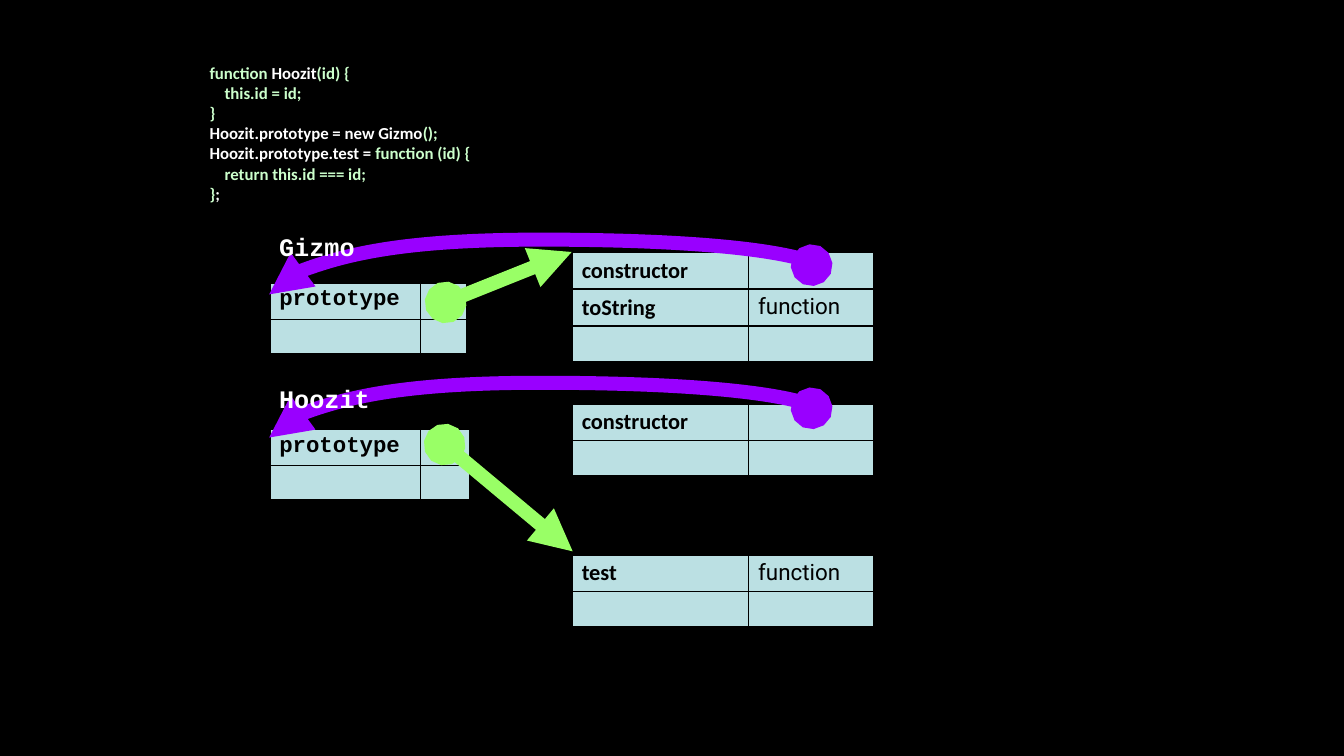
from lxml import etree
from pptx import Presentation
from pptx.dml.color import RGBColor
from pptx.enum.shapes import MSO_CONNECTOR
from pptx.oxml.ns import qn
from pptx.util import Inches, Pt

BLACK = RGBColor(0x00, 0x00, 0x00)
WHITE = RGBColor(0xFF, 0xFF, 0xFF)
MINT = RGBColor(0xCC, 0xFF, 0xCC)
CELL = RGBColor(0xBB, 0xE0, 0xE3)
GREEN = RGBColor(0x99, 0xFF, 0x66)
PURPLE = RGBColor(0x99, 0x00, 0xFF)

CODE_FONT = dict(name="Calibri", size=Pt(12), bold=True)
LABEL_FONT = dict(name="Courier New", size=Pt(18), bold=True)
PROPERTY_FONT = dict(name="Calibri", size=Pt(16), bold=True)
MEMBER_FONT = dict(name="Courier New", size=Pt(16), bold=True)
VALUE_FONT = dict(name="Roboto", size=Pt(16), bold=False)

CODE = [
    (0, [("function ", MINT), ("Hoozit", WHITE), ("(id) {", MINT)]),
    (1, [("this.id = id;", MINT)]),
    (0, [("}", MINT)]),
    (0, [("Hoozit.prototype = new Gizmo", WHITE), ("();", MINT)]),
    (0, [("Hoozit.prototype.test = ", WHITE), ("function (id) {", MINT)]),
    (1, [("return this.id === id;", MINT)]),
    (0, [("}", MINT), (";", WHITE)]),
]


def add_run(p, text, font, color):
    """Add a run with the given font values and colour."""
    r = p.add_run()
    r.text = text
    for key, value in font.items():
        setattr(r.font, key, value)
    r.font.color.rgb = color


def add_code(slide, left, top, width, height):
    """Place the code listing in its box."""
    tf = slide.shapes.add_textbox(
        Inches(left), Inches(top), Inches(width), Inches(height)).text_frame
    tf.word_wrap = True
    for i, (level, parts) in enumerate(CODE):
        p = tf.paragraphs[0] if i == 0 else tf.add_paragraph()
        p._p.get_or_add_pPr().set("marL", str(Inches(0.15 * level)))
        for text, color in parts:
            add_run(p, text, CODE_FONT, color)


def add_label(slide, text, left, top, width):
    """Place the name above an object table."""
    tf = slide.shapes.add_textbox(
        Inches(left), Inches(top), Inches(width), Inches(0.4)).text_frame
    tf.word_wrap = False
    add_run(tf.paragraphs[0], text, LABEL_FONT, WHITE)


def set_borders(cell, widths):
    """Draw black cell borders with a width in points for each side."""
    tcPr = cell._tc.get_or_add_tcPr()
    for i, (side, width) in enumerate(widths.items()):
        ln = etree.Element(qn(f"a:ln{side}"), w=str(Pt(width)))
        fill = etree.SubElement(ln, qn("a:solidFill"))
        etree.SubElement(fill, qn("a:srgbClr"), val=str(BLACK))
        tcPr.insert(i, ln)


def add_object(slide, left, top, col_widths, row_height, rows, key_font):
    """Place an object table of keys and values at the given corner."""
    n_rows, n_cols = len(rows), len(col_widths)
    table = slide.shapes.add_table(
        n_rows, n_cols, Inches(left), Inches(top),
        Inches(sum(col_widths)), Inches(row_height * n_rows)).table
    table.first_row = table.horz_banding = False
    for col, width in zip(table.columns, col_widths):
        col.width = Inches(width)
    for i, row in enumerate(rows):
        table.rows[i].height = Inches(row_height)
        for j, (text, font) in enumerate(zip(row, (key_font, VALUE_FONT))):
            cell = table.cell(i, j)
            cell.fill.solid()
            cell.fill.fore_color.rgb = CELL
            outer = dict(L=j == 0, R=j == n_cols - 1, T=i == 0, B=i == n_rows - 1)
            set_borders(cell, {side: 2.25 if edge else 1 for side, edge in outer.items()})
            p = cell.text_frame.paragraphs[0]
            if text:
                add_run(p, text, font, BLACK)
            else:
                p._p.get_or_add_endParaRPr().set("sz", "1200")


def add_arrow(slide, kind, start, end, color):
    """Draw a thick arrow with a round tail and a triangular head."""
    sp = slide.shapes.add_connector(kind, *map(Inches, start + end))
    sp.line.width = Pt(10)
    sp.line.color.rgb = color
    ln = sp.line._get_or_add_ln()
    etree.SubElement(ln, qn("a:headEnd"), type="oval")
    etree.SubElement(ln, qn("a:tailEnd"), type="triangle")
    etree.SubElement(sp._element.spPr, qn("a:effectLst"))
    return sp


def add_back_arrow(slide, left, top, width, height):
    """Arch an arrow from the box's upper right to its lower left."""
    cx, cy = left + width / 2, top + height / 2
    start = (cx + height / 2, cy + width / 2)
    end = (cx - height / 2, cy - width / 2)
    sp = add_arrow(slide, MSO_CONNECTOR.CURVE, start, end, PURPLE)
    spPr = sp._element.spPr
    spPr.find(qn("a:xfrm")).set("rot", str(270 * 60000))
    geom = spPr.find(qn("a:prstGeom"))
    for av in geom.findall(qn("a:avLst")):
        geom.remove(av)
    av = etree.SubElement(geom, qn("a:avLst"))
    etree.SubElement(av, qn("a:gd"), name="adj1", fmla="val -87300")


def build_slide(prs):
    """Build the prototype chain slide."""
    slide = prs.slides.add_slide(prs.slide_layouts[6])
    slide.background.fill.solid()
    slide.background.fill.fore_color.rgb = BLACK
    add_code(slide, 1.98, 0.57, 8.5, 1.51)

    left, right = 2.67, 5.67
    empty = ("", "")
    prototype = [("prototype", ""), empty]
    for top, value_width in ((2.8, 0.47), (4.25, 0.5)):
        add_object(slide, left, top, (1.5, value_width), 0.35, prototype, MEMBER_FONT)
    for top, rows in (
        (2.5, [("constructor", ""), ("toString", "function"), empty]),
        (4, [("constructor", ""), empty]),
        (5.5, [("test", "function"), empty]),
    ):
        add_object(slide, right, top, (1.75, 1.25), 0.36, rows, PROPERTY_FONT)

    for start, end in (((4.42, 3), (right, 2.5)), ((4.41, 4.41), (5.68, 5.47))):
        add_arrow(slide, MSO_CONNECTOR.STRAIGHT, start, end, GREEN)
    for top in (2.63, 4.05):
        add_back_arrow(slide, left, top, 5.38, 0.29)
    for text, top, width in (("Gizmo", 2.25, 0.96), ("Hoozit", 3.75, 1.1)):
        add_label(slide, text, left, top, width)


def main():
    """Create and save the presentation."""
    prs = Presentation()
    prs.slide_width, prs.slide_height = Inches(13.33), Inches(7.5)
    build_slide(prs)
    prs.save("out.pptx")


if __name__ == "__main__":
    main()
